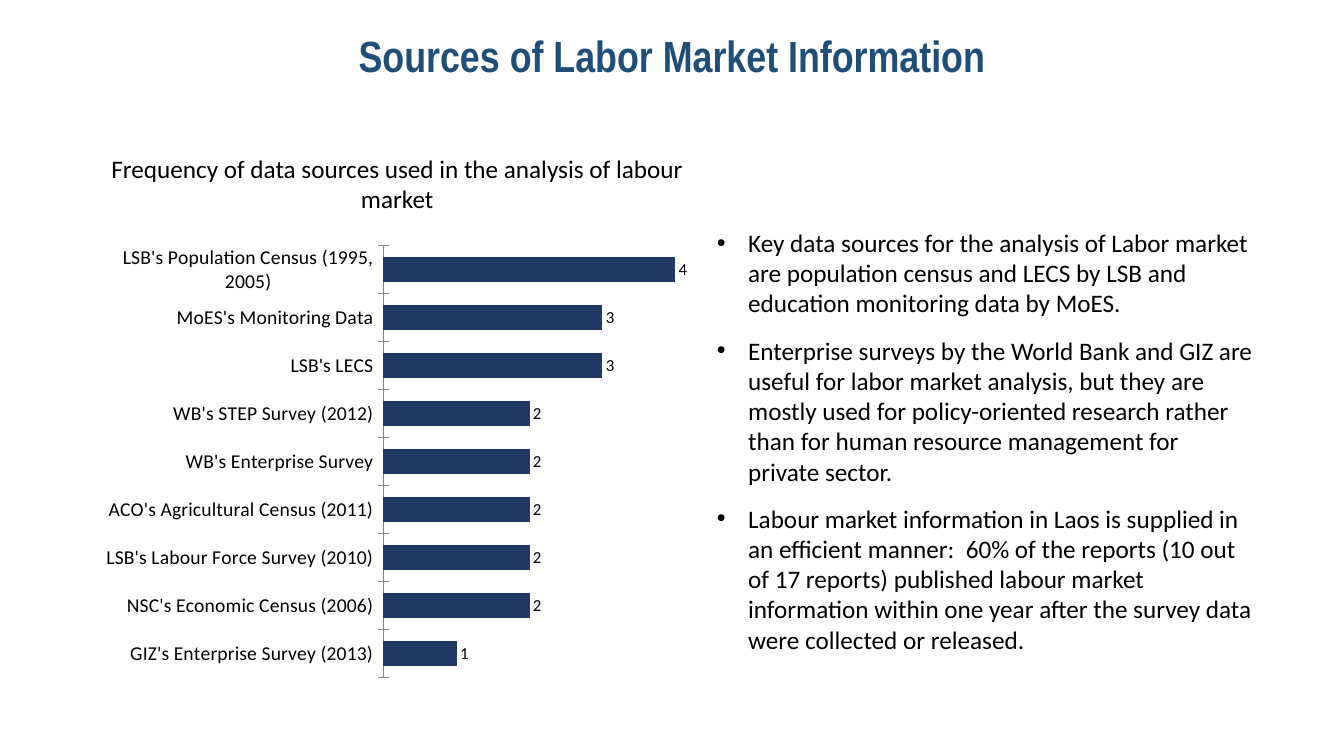
import dataclasses
import typing

import lxml.etree
import pptx
import pptx.chart.data
import pptx.dml.color
import pptx.enum.chart
import pptx.enum.text
import pptx.oxml
import pptx.oxml.ns
import pptx.util

Cm = pptx.util.Cm
Pt = pptx.util.Pt
Align = pptx.enum.text.PP_ALIGN
Tick = pptx.enum.chart.XL_TICK_MARK
BLACK, NAVY, BLUE, GREY = "000000", "203864", "1F4E79", "868686"


@dataclasses.dataclass
class Box:
    left: float
    top: float
    width: float
    height: float

    def sizes(self) -> dict[str, int]:
        return {key: Cm(value) for key, value in dataclasses.asdict(self).items()}


@dataclasses.dataclass
class Style:
    face: str
    size: float
    tint: str
    bold: bool = False


PLAIN = Style("Calibri", 18, BLACK)
HEAD = Style("Arial Narrow", 31.2, BLUE, True)

TITLE = "Sources of Labor Market Information"
CAPTION = "Frequency of data sources used in the analysis of labour market"
POINTS = [
    "Key data sources for the analysis of Labor market are population census and LECS "
    "by LSB and education monitoring data by MoES.",
    "Enterprise surveys by the World Bank and GIZ are useful for labor market analysis, "
    "but they are mostly used for policy-oriented research rather than for human "
    "resource management for private sector.",
    "Labour market information in Laos is supplied in an efficient manner:  60% of the "
    "reports (10 out of 17 reports) published labour market information within one year "
    "after the survey data were collected or released.",
]
COUNTS = {
    "GIZ's Enterprise Survey (2013)": 1,
    "NSC's Economic Census (2006)": 2,
    "LSB's Labour Force Survey (2010)": 2,
    "ACO's Agricultural Census (2011)": 2,
    "WB's Enterprise Survey": 2,
    "WB's STEP Survey (2012)": 2,
    "LSB's LECS": 3,
    "MoES's Monitoring Data": 3,
    "LSB's Population Census (1995, 2005)": 4,
}


def assign(target: typing.Any, values: dict[str, typing.Any]) -> None:
    for key, value in values.items():
        setattr(target, key, value)


def color(text: str) -> pptx.dml.color.RGBColor:
    return pptx.dml.color.RGBColor.from_string(text)


def style_font(font: typing.Any, style: Style) -> None:
    assign(font, {"name": style.face, "size": Pt(style.size), "bold": style.bold})
    font.color.rgb = color(style.tint)


def write(shape: typing.Any, box: Box, lines: list[str], style: Style,
          form: dict[str, typing.Any]) -> None:
    """Place a text shape and fill it, one paragraph per line."""
    assign(shape, box.sizes())
    frame = shape.text_frame
    assign(frame, {
        "word_wrap": True,
        "auto_size": pptx.enum.text.MSO_AUTO_SIZE.NONE,
        "vertical_anchor": pptx.enum.text.MSO_ANCHOR.MIDDLE,
    })
    for index, line in enumerate(lines):
        para = frame.paragraphs[0] if index == 0 else frame.add_paragraph()
        assign(para, form)
        if index == 0:
            para.space_before = Pt(0)
        run = para.add_run()
        run.text = line
        style_font(run.font, style)


def add_dots(frame: typing.Any) -> None:
    """Give each paragraph a hanging round bullet."""
    for para in frame.paragraphs:
        props = para._p.get_or_add_pPr()
        assign_to = {"marL": Cm(0.79), "indent": -Cm(0.79)}
        for key, value in assign_to.items():
            props.set(key, str(int(value)))
        for tag, key, value in (("a:buFont", "typeface", "Arial"), ("a:buChar", "char", "•")):
            lxml.etree.SubElement(props, pptx.oxml.ns.qn(tag)).set(key, value)


def fix_plot(chart: typing.Any, x: float, y: float, w: float, h: float) -> None:
    """Pin the inner plot area, in fractions of the chart."""
    area = chart._chartSpace.chart.plotArea
    for old in area.findall(pptx.oxml.ns.qn("c:layout")):
        area.remove(old)
    modes = '<c:layoutTarget val="inner"/><c:xMode val="edge"/><c:yMode val="edge"/>'
    sizes = "".join(f'<c:{key} val="{value}"/>'
                    for key, value in {"x": x, "y": y, "w": w, "h": h}.items())
    area.insert(0, pptx.oxml.parse_xml(
        f'<c:layout {pptx.oxml.ns.nsdecls("c")}><c:manualLayout>'
        f'{modes}{sizes}</c:manualLayout></c:layout>'))


def add_bars(slide: typing.Any, box: Box) -> None:
    data = pptx.chart.data.CategoryChartData()
    data.categories = list(COUNTS)
    data.add_series("Series 1", list(COUNTS.values()))
    place = box.sizes()
    chart = slide.shapes.add_chart(
        pptx.enum.chart.XL_CHART_TYPE.BAR_CLUSTERED, *place.values(), data).chart
    assign(chart, {"has_legend": False, "has_title": False})
    style_font(chart.font, Style("Calibri", 12, BLACK))

    names = chart.category_axis
    assign(names, {"major_tick_mark": Tick.CROSS, "minor_tick_mark": Tick.NONE,
                   "has_major_gridlines": False})
    style_font(names.tick_labels.font, Style("Calibri", 14, BLACK))
    names.format.line.color.rgb = color(GREY)
    names.format.line.width = Pt(0.75)

    scale = chart.value_axis
    assign(scale, {
        "minimum_scale": 0, "maximum_scale": 4.5, "has_major_gridlines": False,
        "major_tick_mark": Tick.NONE, "minor_tick_mark": Tick.NONE,
        "tick_label_position": pptx.enum.chart.XL_TICK_LABEL_POSITION.NONE,
    })
    scale.format.line.fill.background()

    plot = chart.plots[0]
    assign(plot, {"gap_width": 98, "vary_by_categories": False, "has_data_labels": True})
    assign(plot.data_labels, {
        "show_value": True,
        "position": pptx.enum.chart.XL_LABEL_POSITION.OUTSIDE_END,
    })
    style_font(plot.data_labels.font, Style("Calibri", 12, BLACK))
    bars = plot.series[0].format
    bars.fill.solid()
    bars.fill.fore_color.rgb = color(NAVY)
    bars.line.color.rgb = color(NAVY)
    bars.line.width = Pt(0.75)
    fix_plot(chart, 0.46, 0.02, 0.52, 0.96)


def main() -> None:
    deck = pptx.Presentation()
    assign(deck, {"slide_width": Cm(33.87), "slide_height": Cm(19.05)})
    slide = deck.slides.add_slide(deck.slide_layouts[1])
    add_bars(slide, Box(2.36, 5.97, 15.88, 11.33))
    label = slide.shapes.add_textbox(0, 0, 0, 0)
    write(label, Box(2.21, 3.73, 15.6, 1.8), [CAPTION], PLAIN, {"alignment": Align.CENTER})
    body = slide.placeholders[1]
    write(body, Box(17.81, 5.54, 14.05, 11.13), POINTS, PLAIN,
          {"alignment": Align.LEFT, "line_spacing": 1.0,
           "space_before": Pt(6), "space_after": Pt(6)})
    add_dots(body.text_frame)
    write(slide.shapes.title, Box(0, 0.36, 33.87, 2.24), [TITLE], HEAD,
          {"alignment": Align.CENTER, "line_spacing": 0.9})
    deck.save("out.pptx")


if __name__ == "__main__":
    main()
